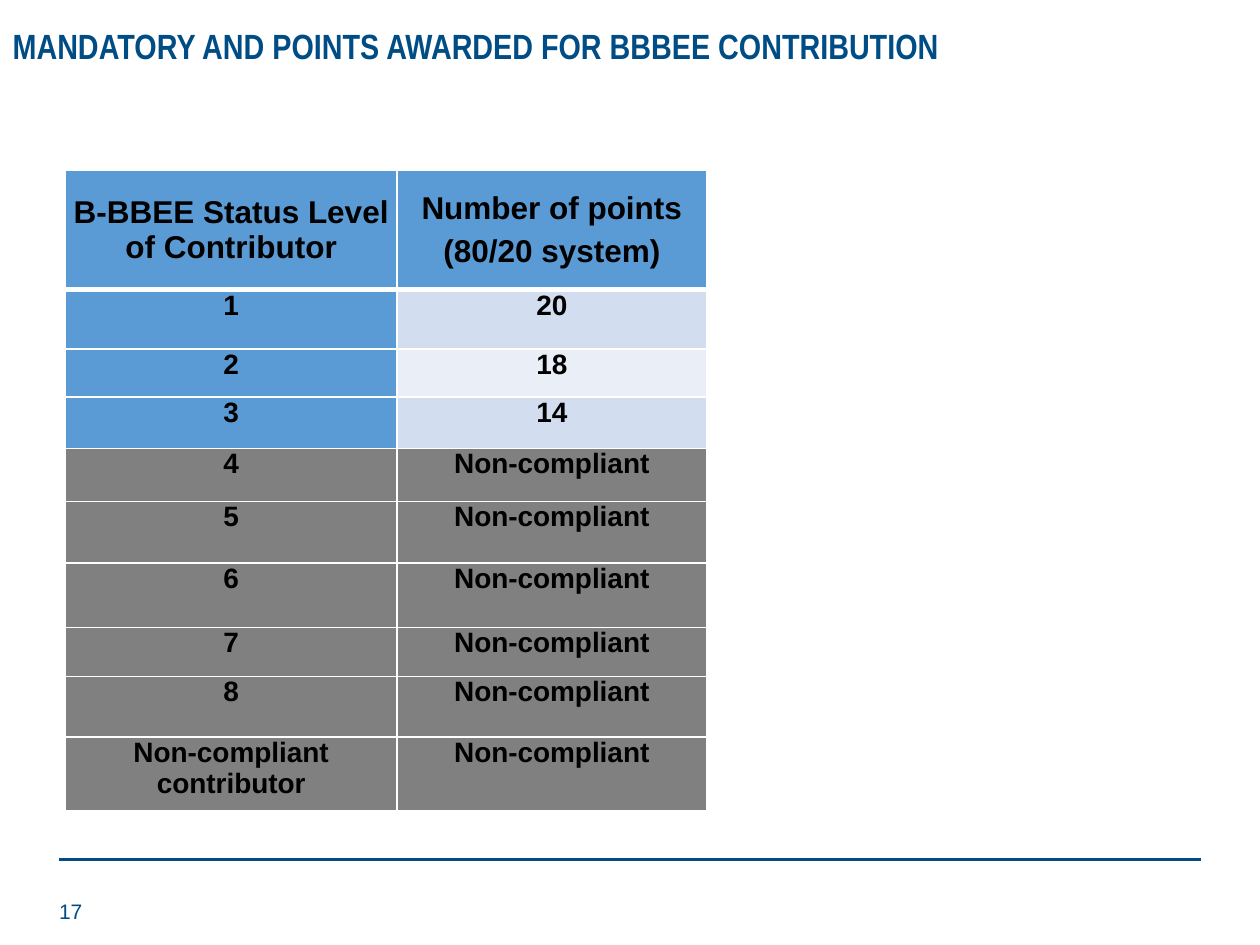
import pptx
import pptx.dml.color
import pptx.enum.shapes
import pptx.enum.text
import pptx.oxml.ns
import pptx.util
from lxml import etree

Inches = pptx.util.Inches
Pt = pptx.util.Pt
RGBColor = pptx.dml.color.RGBColor
ALIGN = pptx.enum.text.PP_ALIGN
ANCHOR = pptx.enum.text.MSO_ANCHOR
qn = pptx.oxml.ns.qn

NAVY = RGBColor(0x00, 0x4C, 0x85)
BLUE = RGBColor(0x5B, 0x9B, 0xD5)
BAND_DARK = RGBColor(0xD2, 0xDE, 0xEF)
BAND_LIGHT = RGBColor(0xEA, 0xEF, 0xF7)
GRAY = RGBColor(0x80, 0x80, 0x80)
BLACK = RGBColor(0x00, 0x00, 0x00)
WHITE = RGBColor(0xFF, 0xFF, 0xFF)

HEADER = ["B-BBEE Status Level of Contributor",
          "Number of points\n(80/20 system)"]
POINTS = {"1": "20", "2": "18", "3": "14"}
NON_COMPLIANT = ["4", "5", "6", "7", "8", "Non-compliant contributor"]
COL_WIDTHS = [2.63, 2.46]
ROW_HEIGHTS = [0.95, 0.47, 0.38, 0.41, 0.42, 0.49, 0.51, 0.39, 0.48, 0.59]


class SlideBuilder:
    font_name = "Arial"

    def __init__(self, slide):
        self.slide = slide

    def fill_text(self, tf, text, size, color, bold=False, name=None,
                  align=ALIGN.LEFT, space_before=0, line_spacing=1.0):
        """Fill a text frame, one paragraph for each line of text."""
        font = {"name": name or self.font_name, "size": Pt(size), "bold": bold}
        for i, line in enumerate(text.split("\n")):
            p = tf.add_paragraph() if i else tf.paragraphs[0]
            p.alignment = align
            p.line_spacing = line_spacing
            p.space_before = Pt(space_before if i else 0)
            r = p.add_run()
            r.text = line
            for key, value in font.items():
                setattr(r.font, key, value)
            r.font.color.rgb = color

    def title(self, text, x, y, w, h, **style):
        sp = self.slide.shapes.title
        sp.left, sp.top, sp.width, sp.height = map(Inches, (x, y, w, h))
        sp.text_frame.vertical_anchor = ANCHOR.TOP
        self.fill_text(sp.text_frame, text, **style)

    def text(self, text, x, y, w, h, **style):
        sp = self.slide.shapes.add_textbox(*map(Inches, (x, y, w, h)))
        tf = sp.text_frame
        tf.word_wrap = True
        tf.vertical_anchor = ANCHOR.MIDDLE
        self.fill_text(tf, text, **style)

    def line(self, x1, y1, x2, y2, color, width):
        cxn = self.slide.shapes.add_connector(
            pptx.enum.shapes.MSO_CONNECTOR.STRAIGHT,
            *map(Inches, (x1, y1, x2, y2)))
        cxn.line.color.rgb = color
        cxn.line.width = Pt(width)
        etree.SubElement(cxn._element.spPr, qn("a:effectLst"))

    def borders(self, cell, color, widths):
        """Draw cell borders; widths are points by side, in L, R, T, B order."""
        tc_pr = cell._tc.get_or_add_tcPr()
        for side, width in widths.items():
            ln = etree.SubElement(tc_pr, qn(f"a:ln{side}"), w=str(Pt(width)))
            fill = etree.SubElement(ln, qn("a:solidFill"))
            etree.SubElement(fill, qn("a:srgbClr"), val=str(color))

    def table(self, rows, fills, x, y, col_widths, row_heights):
        frame = self.slide.shapes.add_table(
            len(rows), len(col_widths), Inches(x), Inches(y),
            Inches(sum(col_widths)), Inches(sum(row_heights)))
        table = frame.table
        for column, width in zip(table.columns, col_widths):
            column.width = Inches(width)
        for row, height in zip(table.rows, row_heights):
            row.height = Inches(height)
        margins = {"margin_left": 0.04, "margin_right": 0.04,
                   "margin_top": 0, "margin_bottom": 0}
        for i, (texts, colors) in enumerate(zip(rows, fills)):
            top = 3 if i == 1 else 1
            bottom = 3 if i == 0 else 1
            for j, (text, color) in enumerate(zip(texts, colors)):
                cell = table.cell(i, j)
                for key, value in margins.items():
                    setattr(cell, key, Inches(value))
                cell.vertical_anchor = ANCHOR.TOP if i else ANCHOR.MIDDLE
                self.borders(cell, WHITE,
                             {"L": 1, "R": 1, "T": top, "B": bottom})
                cell.fill.solid()
                cell.fill.fore_color.rgb = color
                self.fill_text(cell.text_frame, text, size=16 if i else 18,
                               color=BLACK, bold=True, align=ALIGN.CENTER,
                               space_before=4.8)


def main():
    prs = pptx.Presentation()
    prs.slide_width, prs.slide_height = Inches(10), Inches(7.5)
    s = SlideBuilder(prs.slides.add_slide(prs.slide_layouts[5]))

    s.line(0.47, 6.82, 9.53, 6.82, NAVY, 2)
    s.text("17", 0.37, 7.03, 2.25, 0.4, size=12, color=NAVY)
    s.title("MANDATORY AND POINTS AWARDED FOR BBBEE CONTRIBUTION",
            0, 0.18, 9.84, 0.67, size=20, color=NAVY, bold=True,
            name="Arial Narrow", align=ALIGN.JUSTIFY, line_spacing=0.9)

    rows = [HEADER, *POINTS.items(),
            *([level, "Non-compliant"] for level in NON_COMPLIANT)]
    fills = [(BLUE, BLUE), (BLUE, BAND_DARK), (BLUE, BAND_LIGHT),
             (BLUE, BAND_DARK)] + [(GRAY, GRAY)] * len(NON_COMPLIANT)
    s.table(rows, fills, 0.52, 1.35, COL_WIDTHS, ROW_HEIGHTS)

    prs.save("out.pptx")


if __name__ == "__main__":
    main()
